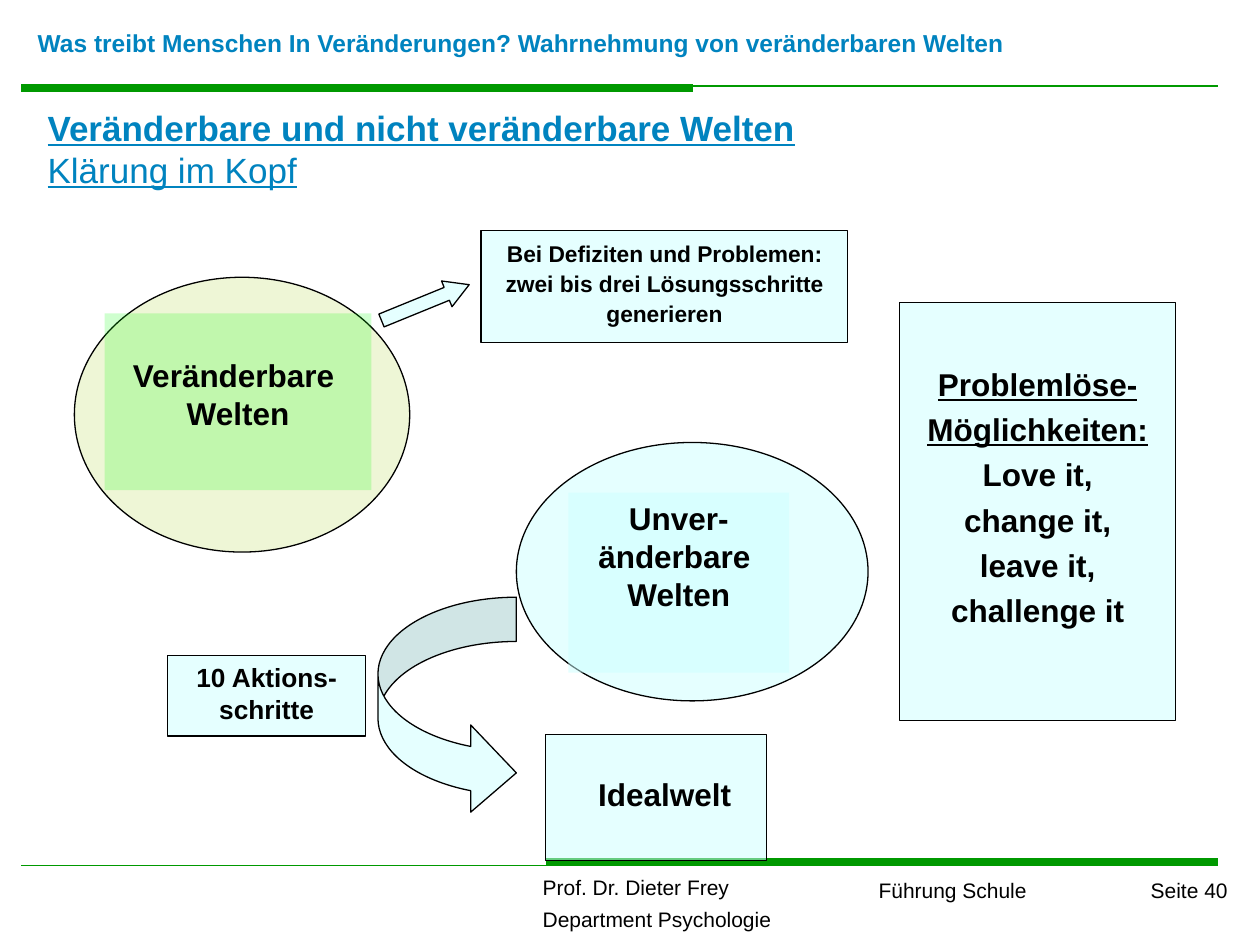
from lxml import etree
from pptx import Presentation
from pptx.dml.color import RGBColor
from pptx.enum.shapes import MSO_CONNECTOR, MSO_SHAPE
from pptx.enum.text import MSO_ANCHOR, PP_ALIGN
from pptx.oxml.ns import qn
from pptx.util import Cm, Pt

LEFT, CENTER, RIGHT = PP_ALIGN.LEFT, PP_ALIGN.CENTER, PP_ALIGN.RIGHT
TOP, MIDDLE = MSO_ANCHOR.TOP, MSO_ANCHOR.MIDDLE
RECT, OVAL = MSO_SHAPE.RECTANGLE, MSO_SHAPE.OVAL
CURVED, ARROW = MSO_SHAPE.CURVED_RIGHT_ARROW, MSO_SHAPE.RIGHT_ARROW

COLORS = {"black": "000000", "blue": "0083BF", "rule": "009900",
          "aqua": "CCFFFF", "olive": "99CC00", "green": "00FF00"}
FONT = "Arial"
INSET_X, INSET_Y = 0.25, 0.13

RULES = [
    (9.73, 24.56, 1.73, 1),
    (0.43, 13.97, 1.78, 4.5),
    (0.43, 15.67, 17.45, 1),
    (11, 24.56, 17.37, 4.5),
]

FOOTERS = [
    ((15.29, 17.65, 5.66, 0.66), ["Führung Schule"], RIGHT, 0.8),
    ((10.69, 17.6, 9.19, 1.32), ["Prof. Dr. Dieter Frey", "Department Psychologie"], LEFT, 0.8),
    ((20.12, 17.7, 4.88, 0.61), ["Seite 40"], RIGHT, 0.7),
]

TITLE = [("Veränderbare und nicht veränderbare Welten", True), ("Klärung im Kopf", False)]
HEADER = "Was treibt Menschen In Veränderungen? Wahrnehmung von veränderbaren Welten"

OPTIONS = [
    [("Problemlöse-Möglichkeiten:", True), (" Love it,", False)],
    [("change it,", False)],
    [("leave it, challenge it", False)],
]

SHAPES = [
    {"kind": RECT, "at": (18.14, 6.1, 5.56, 8.43), "text": OPTIONS, "size": 18,
     "spacing": 1.2, "top": 1.1},
    {"kind": OVAL, "at": (10.41, 8.92, 7.09, 5.21)},
    {"kind": RECT, "at": (11.46, 9.93, 4.45, 3.63), "outline": False, "size": 18,
     "text": [[("Unver-änderbare ", False)], [("Welten", False)]]},
    {"kind": OVAL, "at": (1.5, 5.59, 6.76, 5.54), "fill": "olive", "opacity": 16},
    {"kind": RECT, "at": (2.11, 6.32, 5.38, 3.56), "fill": "green", "opacity": 19,
     "outline": False, "size": 18, "top": 0.86,
     "text": [[("Veränderbare ", False)], [("Welten", False)]]},
    {"kind": RECT, "at": (9.7, 4.65, 7.39, 2.26), "size": 13, "spacing": 1.1,
     "text": [[("Bei Defiziten und Problemen: zwei bis drei Lösungsschritte generieren", False)]]},
    {"kind": CURVED, "at": (7.62, 12.04, 2.79, 4.42), "adjust": (0.32, 0.63, 0.33)},
    {"kind": RECT, "at": (11, 14.81, 4.45, 2.54), "size": 18, "spacing": 1.9, "left": 0.6,
     "text": [[("Idealwelt", False)]]},
    {"kind": RECT, "at": (3.38, 13.21, 3.99, 1.63), "size": 15,
     "text": [[("10 Aktions-schritte", False)]]},
    {"kind": ARROW, "at": (7.62, 5.82, 1.91, 0.56), "adjust": (0.5, 0.87), "turn": 337.8},
]


def color(name):
    return RGBColor.from_string(COLORS[name])


def place(lengths):
    return [Cm(length) for length in lengths]


def add_span(para, text, size, ink="black", bold=False, underline=False):
    span = para.add_run()
    span.text = text
    font = span.font
    font.name, font.size, font.bold, font.underline = FONT, Pt(size), bold, underline
    font.color.rgb = color(ink)


def set_frame(frame, anchor=TOP, left=INSET_X, top=INSET_Y):
    frame.word_wrap = True
    frame.vertical_anchor = anchor
    frame.margin_left, frame.margin_top = Cm(left), Cm(top)
    frame.margin_right, frame.margin_bottom = Cm(INSET_X), Cm(INSET_Y)


def add_para(frame, index, align=LEFT, spacing=1.0):
    para = frame.paragraphs[0] if index == 0 else frame.add_paragraph()
    para.alignment, para.line_spacing = align, spacing
    return para


def add_text_box(page, at, anchor=TOP):
    frame = page.shapes.add_textbox(*place(at)).text_frame
    set_frame(frame, anchor)
    return frame


def add_rule(page, start, end, height, width):
    rule = page.shapes.add_connector(
        MSO_CONNECTOR.STRAIGHT, *place((start, height, end, height)))
    rule.line.color.rgb = color("rule")
    rule.line.width = Pt(width)
    etree.SubElement(rule.element.spPr, qn("a:effectLst"))


def add_figure(page, item):
    shape = page.shapes.add_shape(item["kind"], *place(item["at"]))
    shape.shadow.inherit = False
    shape.rotation = item.get("turn", 0)
    for index, value in enumerate(item.get("adjust", ())):
        shape.adjustments[index] = value
    shape.fill.solid()
    shape.fill.fore_color.rgb = color(item.get("fill", "aqua"))
    tint = shape.element.spPr.find(qn("a:solidFill"))[0]
    etree.SubElement(tint, qn("a:alpha"), val=str(item.get("opacity", 50) * 1000))
    if item.get("outline", True):
        shape.line.color.rgb = color("black")
        shape.line.width = Pt(0.75)
    else:
        shape.line.fill.background()
    if "text" in item:
        frame = shape.text_frame
        set_frame(frame, left=item.get("left", INSET_X), top=item.get("top", INSET_Y))
        for index, spans in enumerate(item["text"]):
            para = add_para(frame, index, CENTER, item.get("spacing", 1.0))
            for text, underline in spans:
                add_span(para, text, item["size"], bold=True, underline=underline)


def main():
    deck = Presentation()
    deck.slide_width, deck.slide_height = Cm(25.4), Cm(19.05)
    page = deck.slides.add_slide(deck.slide_layouts[6])

    for rule in RULES:
        add_rule(page, *rule)

    for at, lines, align, spacing in FOOTERS:
        frame = add_text_box(page, at)
        for index, line in enumerate(lines):
            para = add_para(frame, index, align, spacing)
            if index:
                para.space_before = Pt(6.5)
            add_span(para, line, 12)

    para = add_para(add_text_box(page, (0.71, 1.93, 22.23, 2.11), MIDDLE), 0)
    for index, (line, bold) in enumerate(TITLE):
        if index:
            para.add_line_break()
        add_span(para, line, 20, "blue", bold, True)

    for item in SHAPES:
        add_figure(page, item)

    para = add_para(add_text_box(page, (0.51, 0.43, 20.8, 1.47)), 0)
    add_span(para, HEADER, 14, "blue", True)

    deck.save("out.pptx")


if __name__ == "__main__":
    main()
